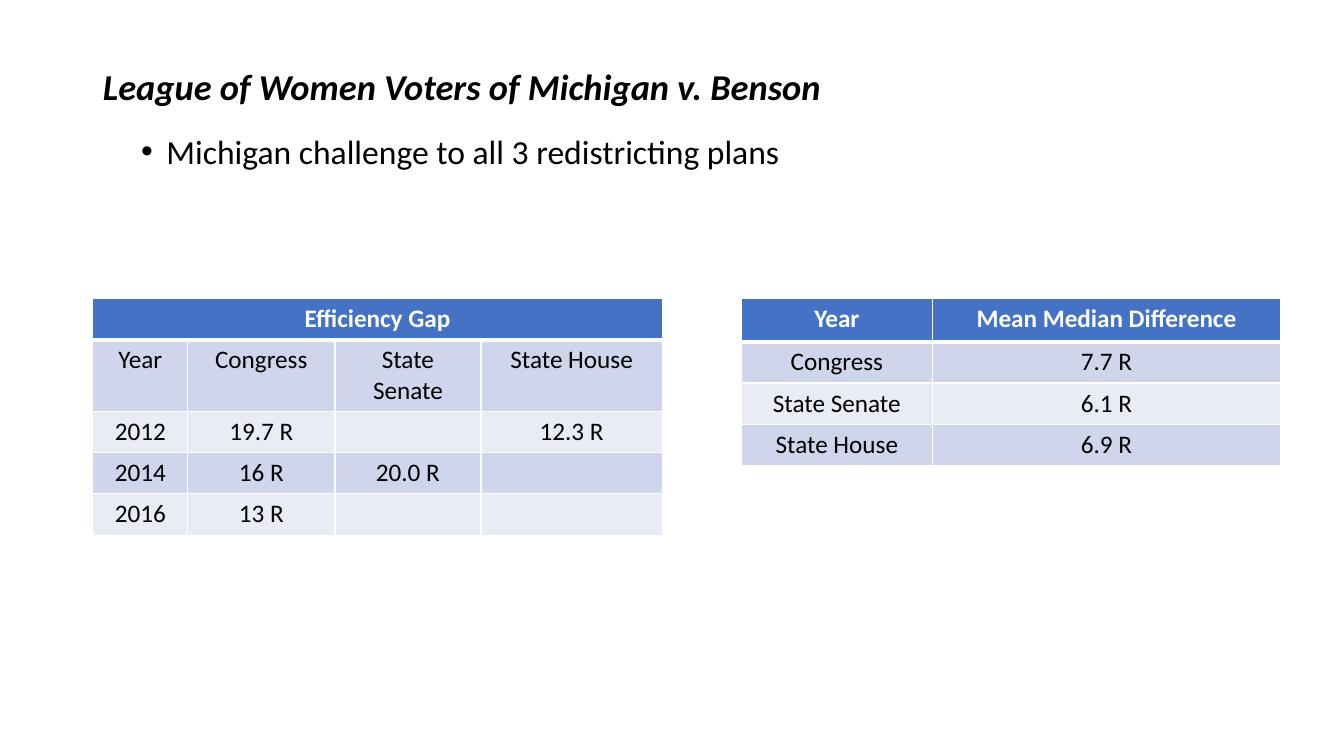
import pptx
import pptx.util
import pptx.dml.color
import pptx.enum.text
import pptx.oxml
import pptx.oxml.ns

Cm = pptx.util.Cm
Pt = pptx.util.Pt
ALIGN = pptx.enum.text.PP_ALIGN
ANCHOR = pptx.enum.text.MSO_ANCHOR
FIT = pptx.enum.text.MSO_AUTO_SIZE

HUES = {"head": "4472C4", "dark": "CFD5EA", "light": "E9EBF5",
        "white": "FFFFFF", "black": "000000"}


def color(name):
    return pptx.dml.color.RGBColor.from_string(HUES[name])


def style(para, size, hue, bold=False, slant=False):
    font = para.font
    font.name = "Calibri"
    font.size = Pt(size)
    font.bold = bold
    font.italic = slant
    font.color.rgb = color(hue)


def place(shape, box):
    shape.left, shape.top, shape.width, shape.height = map(Cm, box)


def fill_holder(shape, box, text, anchor):
    place(shape, box)
    frame = shape.text_frame
    frame.text = text
    frame.word_wrap = True
    frame.auto_size = FIT.NONE
    frame.vertical_anchor = anchor
    para = frame.paragraphs[0]
    para.alignment = ALIGN.LEFT
    para.line_spacing = 0.9
    return para


def add_title(slide, box, text):
    para = fill_holder(slide.shapes.title, box, text, ANCHOR.MIDDLE)
    style(para, 26, "black", bold=True, slant=True)


def add_body(slide, box, text):
    para = fill_holder(slide.placeholders[1], box, text, ANCHOR.TOP)
    para.space_before = Pt(10)
    style(para, 24, "black")
    props = para._p.get_or_add_pPr()
    props.set("marL", str(Cm(0.64)))
    props.set("indent", str(-Cm(0.64)))


def edge(cell, heavy):
    props = cell._tc.get_or_add_tcPr()
    space = pptx.oxml.ns.nsdecls("a")
    for spot, side in enumerate(("lnL", "lnR", "lnT", "lnB")):
        width = Pt(3 if side == heavy else 1)
        line = pptx.oxml.parse_xml(
            f'<a:{side} {space} w="{width}"><a:solidFill>'
            f'<a:srgbClr val="{HUES["white"]}"/></a:solidFill></a:{side}>')
        props.insert(spot, line)


def add_grid(slide, left, top, widths, heights, rows):
    frame = slide.shapes.add_table(len(rows), len(widths), Cm(left), Cm(top),
                                   Cm(sum(widths)), Cm(sum(heights)))
    table = frame.table
    for col, width in zip(table.columns, widths):
        col.width = Cm(width)
    for r, (row, height) in enumerate(zip(rows, heights)):
        table.rows[r].height = Cm(height)
        hue = "head" if r == 0 else ("light", "dark")[r % 2]
        for c, text in enumerate(row):
            cell = table.cell(r, c)
            cell.text = text
            cell.fill.solid()
            cell.fill.fore_color.rgb = color(hue)
            edge(cell, {0: "lnB", 1: "lnT"}.get(r))
            para = cell.text_frame.paragraphs[0]
            para.alignment = ALIGN.CENTER
            style(para, 18, "black" if r else "white", bold=r == 0)
    return table


def main():
    deck = pptx.Presentation()
    deck.slide_width = Cm(33.87)
    deck.slide_height = Cm(19.05)
    slide = deck.slides.add_slide(deck.slide_layouts[1])
    add_title(slide, (2.34, 1.02, 29.21, 2.44),
              "League of Women Voters of Michigan v. Benson")
    add_body(slide, (3.3, 3.28, 29.21, 2.01),
             "Michigan challenge to all 3 redistricting plans")
    add_grid(slide, 18.69, 7.52, (4.8, 8.79), [1.09] + [1.04] * 3, [
        ("Year", "Mean Median Difference"),
        ("Congress", "7.7 R"),
        ("State Senate", "6.1 R"),
        ("State House", "6.9 R"),
    ])
    gap = add_grid(slide, 2.34, 7.52, (2.39, 3.71, 3.68, 4.57), [1.04] * 5, [
        ("Efficiency Gap", "", "", ""),
        ("Year", "Congress", "State Senate", "State House"),
        ("2012", "19.7 R", "", "12.3 R"),
        ("2014", "16 R", "20.0 R", ""),
        ("2016", "13 R", "", ""),
    ])
    gap.cell(0, 0).merge(gap.cell(0, 3))
    deck.save("out.pptx")


if __name__ == "__main__":
    main()
